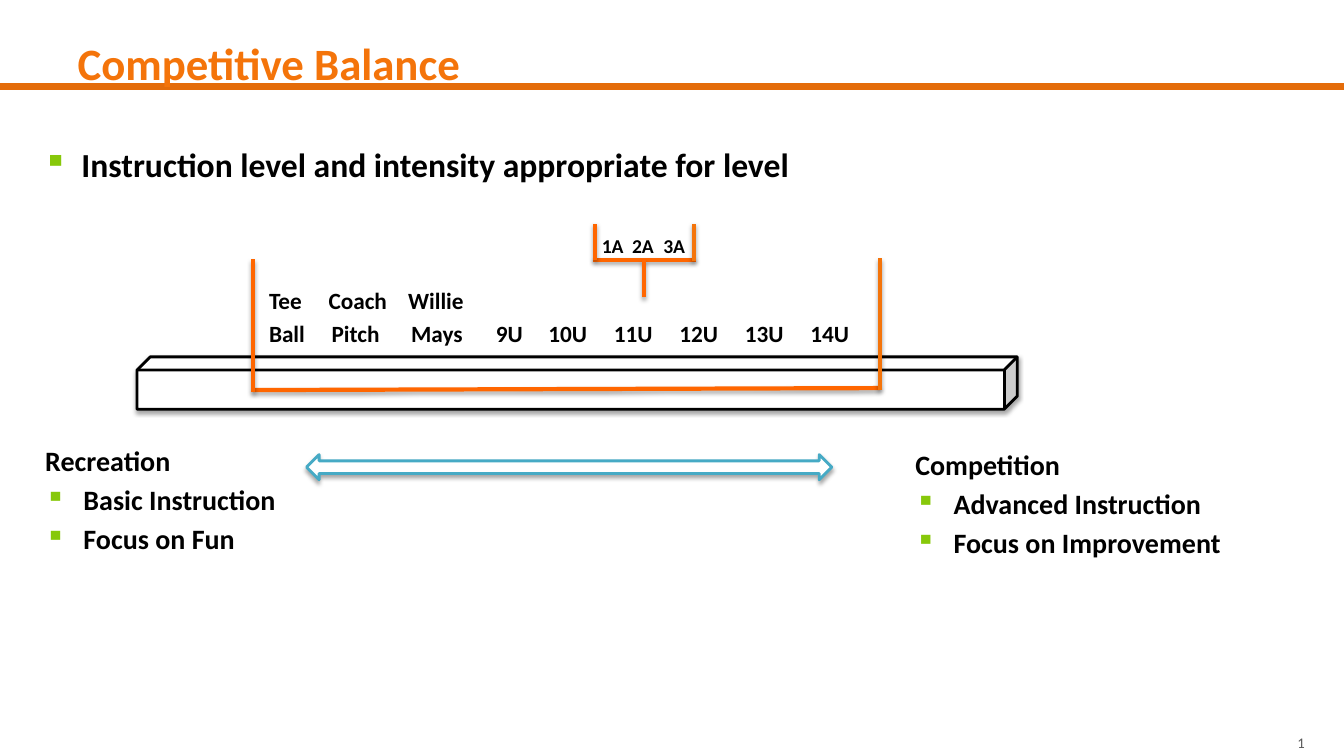
from dataclasses import dataclass

import pptx
import pptx.dml.color
import pptx.enum.shapes
import pptx.enum.text
import pptx.oxml.ns
import pptx.oxml.xmlchemy
import pptx.util
from lxml import etree

PX = 9144  # EMU, 100 px to the inch
FONT = "Calibri"
COLOURS = {
    "rule": "E46C0A",
    "title": "F4740A",
    "bracket": "FF6600",
    "black": "000000",
    "white": "FFFFFF",
    "grey": "595959",
    "bullet": "87C80A",
    "arrow": "46AAC5",
}
BULLET_INDENT = 38
SPACE_SHARE = 0.2


@dataclass(frozen=True)
class Line:
    text: str
    bullet: bool = False
    tabs: tuple[int, ...] = ()


@dataclass(frozen=True)
class TextBlock:
    area: tuple[int, int, int, int]
    size: float
    lines: tuple[Line, ...]
    colour: str = "black"
    bold: bool = True


@dataclass(frozen=True)
class Stroke:
    start: tuple[int, int]
    end: tuple[int, int]
    colour: str = "bracket"
    width: float = 3
    shadow: bool = True


@dataclass(frozen=True)
class Block:
    preset: pptx.enum.shapes.MSO_SHAPE
    area: tuple[int, int, int, int]
    outline: str


TITLE_RULE = Stroke((0, 86), (1333, 86), "rule", 5, shadow=False)

INSTRUCTION = TextBlock((33, 138, 1177, 564), 24, (
    Line("Instruction level and intensity appropriate for level", bullet=True),))
RECREATION = TextBlock((35, 435, 260, 157), 20, (
    Line("Recreation"),
    Line("Basic Instruction", bullet=True),
    Line("Focus on Fun", bullet=True)))
COMPETITION = TextBlock((898, 439, 343, 157), 20, (
    Line("Competition"),
    Line("Advanced Instruction", bullet=True),
    Line("Focus on Improvement", bullet=True)))
AGE_TABS = tuple(277 + 65 * step for step in range(5))
DIVISIONS = TextBlock((257, 279, 608, 65), 16.6, (
    Line("Tee\tCoach\tWillie", tabs=(59, 138)),
    Line("Ball\tPitch\tMays\t9U\t10U\t11U\t12U\t13U\t14U",
         tabs=(62, 141, 225) + AGE_TABS)))
TIERS = TextBlock((587, 227, 129, 43), 14, (
    Line("1A\t2A\t3A", tabs=(30, 61)),))
PAGE_NUMBER = TextBlock((1277, 723, 57, 28), 10.5, (Line("6"),), "grey", bold=False)

BEAM = Block(pptx.enum.shapes.MSO_SHAPE.CUBE, (136, 354, 873, 52), "black")
RANGE_ARROW = Block(
    pptx.enum.shapes.MSO_SHAPE.LEFT_RIGHT_ARROW, (304, 451, 521, 25), "arrow")

DIVISION_BRACKET = (
    Stroke((251, 387), (873, 385)),
    Stroke((251, 389), (251, 257)),
    Stroke((873, 387), (873, 256), "title"),
)
TIER_BRACKET = (
    Stroke((588, 258), (690, 258)),
    Stroke((590, 258), (590, 222)),
    Stroke((688, 259), (688, 222), "title"),
)
TIER_STEM = Stroke((639, 295), (639, 258))


def rgb(name: str) -> pptx.dml.color.RGBColor:
    return pptx.dml.color.RGBColor.from_string(COLOURS[name])


def emu(lengths: tuple[int, ...]) -> list[int]:
    return [length * PX for length in lengths]


def add_child(parent: etree._Element, tag: str, **attributes: object) -> etree._Element:
    values = {key: str(value) for key, value in attributes.items()}
    return etree.SubElement(parent, pptx.oxml.ns.qn(tag), values)


def add_effects(properties: etree._Element, shadow: bool) -> None:
    """Replace the theme's effects with a soft drop shadow or with none."""
    effects = add_child(properties, "a:effectLst")
    if shadow:
        outer = add_child(effects, "a:outerShdw", blurRad=39370, dist=22860,
                          dir=5400000, rotWithShape=0)
        black = add_child(outer, "a:srgbClr", val=COLOURS["black"])
        add_child(black, "a:alpha", val=35000)


def format_span(span, size: float, colour: str, bold: bool) -> None:
    span.font.name = FONT
    span.font.size = pptx.util.Pt(size)
    span.font.bold = bold
    span.font.color.rgb = rgb(colour)


def add_text(page, block: TextBlock):
    box = page.shapes.add_textbox(*emu(block.area))
    frame = box.text_frame
    frame.word_wrap = True
    frame.text = "\n".join(line.text for line in block.lines)
    for index, (para, line) in enumerate(zip(frame.paragraphs, block.lines)):
        properties = para._p.get_or_add_pPr()
        if line.bullet:
            properties.set("marL", str(BULLET_INDENT * PX))
            properties.set("indent", str(-BULLET_INDENT * PX))
            bullet_colour = add_child(properties, "a:buClr")
            add_child(bullet_colour, "a:srgbClr", val=COLOURS["bullet"])
            add_child(properties, "a:buChar", char="▪")
        if line.tabs:
            stops = add_child(properties, "a:tabLst")
            for position in line.tabs:
                add_child(stops, "a:tab", pos=position * PX, algn="l")
        if index:
            para.space_before = pptx.util.Pt(block.size * SPACE_SHARE)
        for span in para.runs:
            format_span(span, block.size, block.colour, block.bold)
    return box


def add_page_number(page) -> None:
    """Write the number as a slide number field."""
    para = add_text(page, PAGE_NUMBER).text_frame.paragraphs[0]
    run = para.runs[0]._r
    field = add_child(para._p, "a:fld", type="slidenum",
                      id="{B6F15528-21DE-4FAA-801E-634DDDAF4B2B}")
    field.extend(list(run))
    para._p.remove(run)


def add_stroke(page, stroke: Stroke) -> None:
    connector = page.shapes.add_connector(
        pptx.enum.shapes.MSO_CONNECTOR.STRAIGHT, *emu(stroke.start + stroke.end))
    connector.line.color.rgb = rgb(stroke.colour)
    connector.line.width = pptx.util.Pt(stroke.width)
    add_effects(connector._element.spPr, stroke.shadow)


def add_block(page, block: Block) -> None:
    shape = page.shapes.add_shape(block.preset, *emu(block.area))
    shape.fill.solid()
    shape.fill.fore_color.rgb = rgb("white")
    shape.line.color.rgb = rgb(block.outline)
    shape.line.width = pptx.util.Pt(2)
    add_effects(shape._element.spPr, shadow=True)


def place_title(page) -> None:
    title = page.shapes.title
    title.left, title.top, title.width, title.height = emu((67, 0, 1200, 125))
    title.text_frame.text = "Competitive Balance"
    title.text_frame.vertical_anchor = pptx.enum.text.MSO_ANCHOR.MIDDLE
    para = title.text_frame.paragraphs[0]
    para.alignment = pptx.enum.text.PP_ALIGN.LEFT
    format_span(para.runs[0], 32, "title", bold=True)
    page.shapes._spTree.append(title._element)  # in front of the rule


def main() -> None:
    deck = pptx.Presentation()
    deck.slide_width, deck.slide_height = emu((1333, 750))
    page = deck.slides.add_slide(deck.slide_layouts[5])
    add_stroke(page, TITLE_RULE)
    add_page_number(page)
    place_title(page)
    add_text(page, INSTRUCTION)
    add_block(page, BEAM)
    add_text(page, RECREATION)
    add_text(page, COMPETITION)
    for stroke in DIVISION_BRACKET:
        add_stroke(page, stroke)
    add_text(page, DIVISIONS)
    for stroke in TIER_BRACKET:
        add_stroke(page, stroke)
    add_text(page, TIERS)
    add_stroke(page, TIER_STEM)
    add_block(page, RANGE_ARROW)
    deck.save("out.pptx")


if __name__ == "__main__":
    main()
